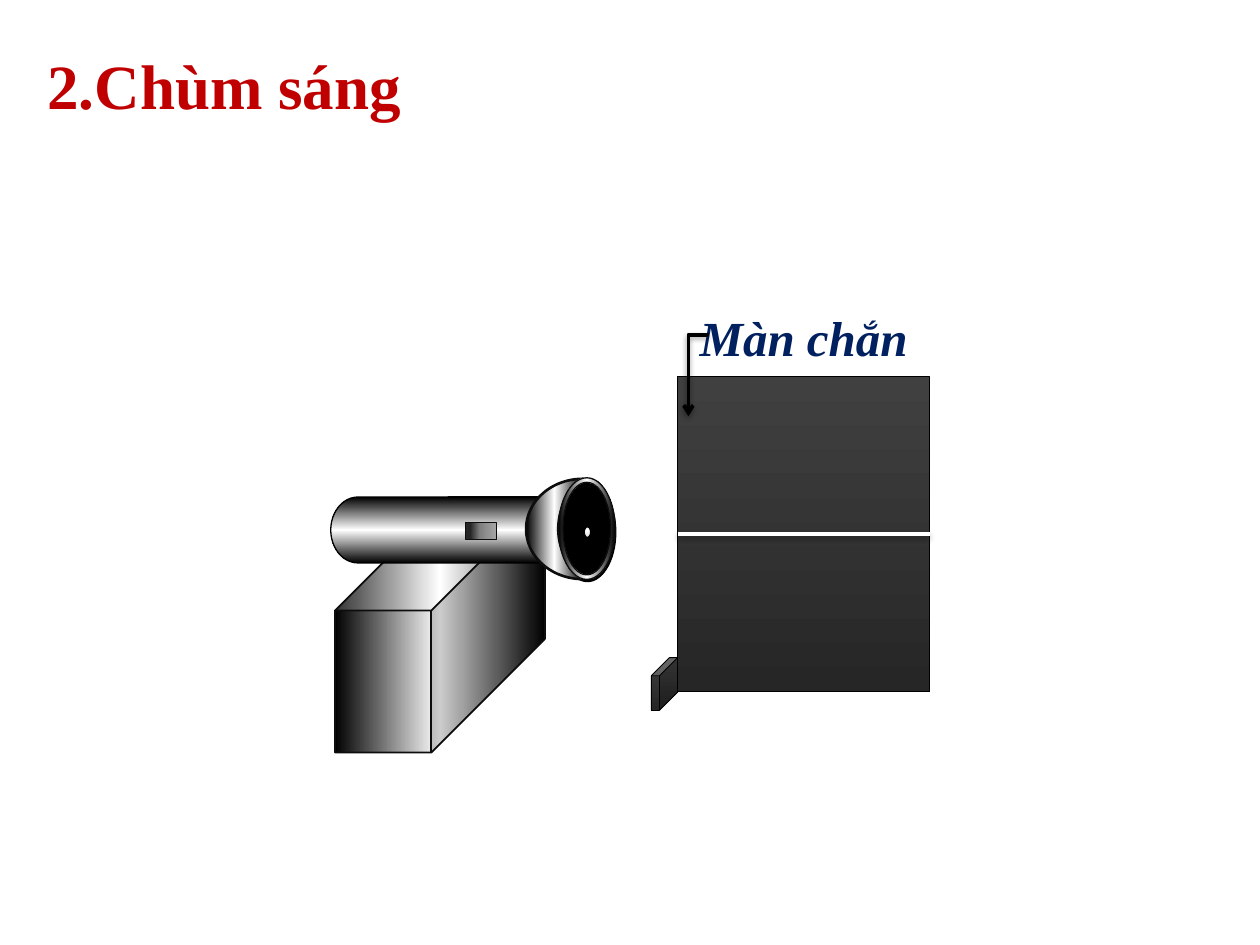
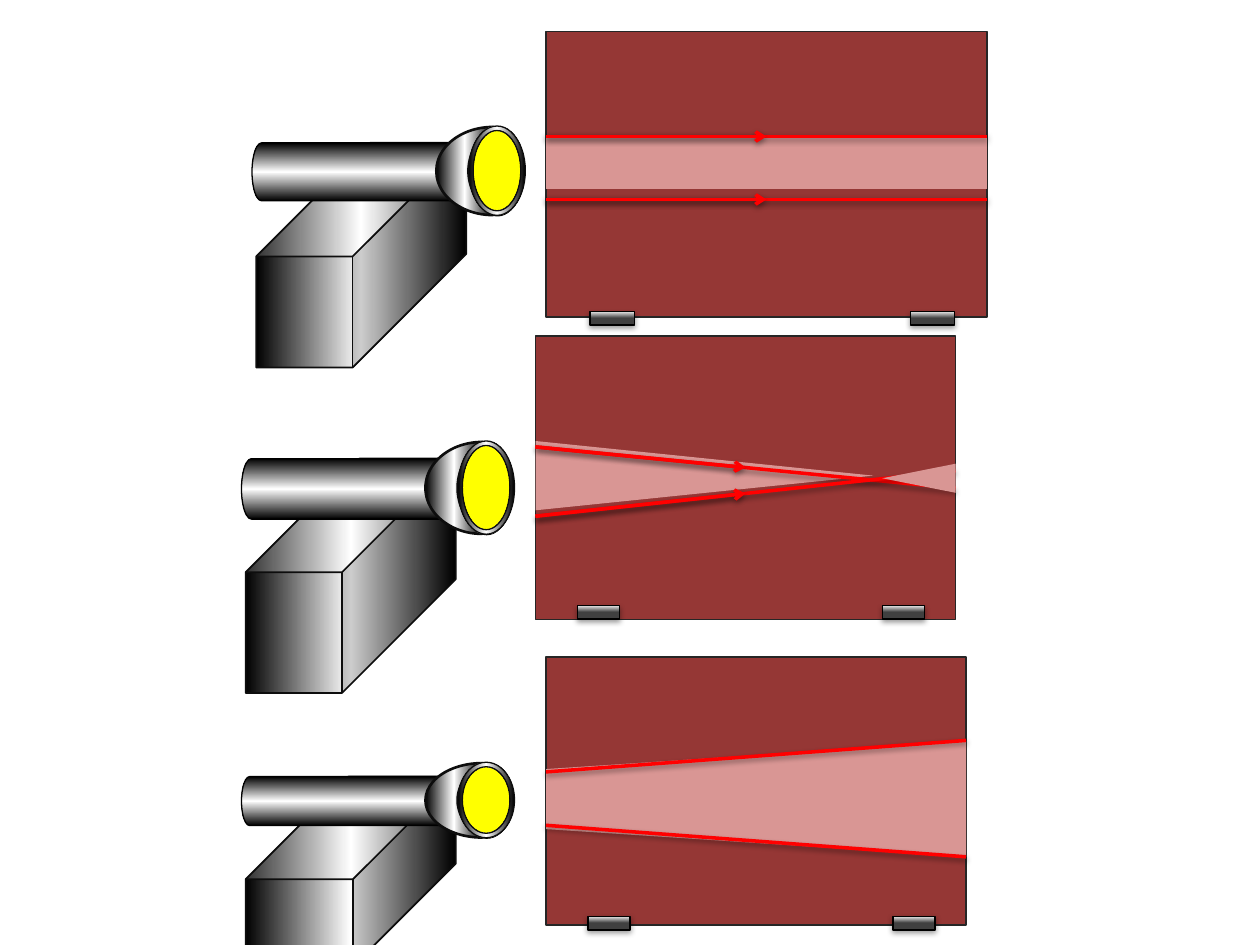
"""Build two slides that show a torch and the kinds of light beam."""
from math import cos, pi, sin

from lxml.etree import SubElement
from pptx import Presentation
from pptx.dml.color import RGBColor
from pptx.enum.shapes import MSO_CONNECTOR, MSO_SHAPE
from pptx.enum.text import MSO_AUTO_SIZE, PP_ALIGN
from pptx.oxml.ns import qn
from pptx.util import Pt

COLORS = {
    "black": "000000", "white": "FFFFFF", "edge": "0D0D0D", "board_edge": "262626",
    "charcoal": "404040", "grey": "808080", "silver": "A6A6A6", "pale": "EEEEEE",
    "board": "953735", "light": "D99694", "ray": "FF0000", "bulb": "FFFF00",
    "title": "C00000", "label": "002060",
}
METAL = ([(0, "black"), (50, "white"), (100, "black")], 0)
SCREEN = ([(0, "board_edge"), (100, "charcoal")], 270)
FOOT = ([(0, "charcoal"), (51, "charcoal"), (100, "pale")], 270)
SWITCH = ([(17, "board_edge"), (48, "grey"), (100, "silver")], 0)
TITLE = {"size": Pt(36), "name": "Times New Roman", "bold": True}
LABEL = {"size": Pt(28), "name": "Times New Roman", "bold": True, "italic": True}


def rgb(name):
    """Return the named colour."""
    return RGBColor.from_string(COLORS[name])


def add_shadow(effects):
    """Add the soft shadow below a part to its effect list."""
    outer = SubElement(effects, qn("a:outerShdw"), blurRad=str(Pt(3.15)),
                       dist=str(Pt(1.57)), dir="5400000", rotWithShape="0")
    color = SubElement(outer, qn("a:srgbClr"), val=COLORS["black"])
    SubElement(color, qn("a:alpha"), val="38000")


def paint(shape, fill, edge=None, width=0.75):
    """Give a shape a plain or gradient fill and an outline."""
    shape.shadow.inherit = False
    if isinstance(fill, str):
        shape.fill.solid()
        shape.fill.fore_color.rgb = rgb(fill)
    else:
        stops, angle = fill
        shape.fill.gradient()
        gradient = shape._element.spPr.find(qn("a:gradFill"))
        stop_list = gradient.find(qn("a:gsLst"))
        for stop in list(stop_list):
            stop_list.remove(stop)
        for position, name in stops:
            stop = SubElement(stop_list, qn("a:gs"), pos=str(position * 1000))
            SubElement(stop, qn("a:srgbClr"), val=COLORS[name])
        gradient.find(qn("a:lin")).set("ang", str(angle * 60000))
    if edge:
        shape.line.color.rgb = rgb(edge)
        shape.line.width = Pt(width)
    else:
        shape.line.fill.background()


def add_part(slide, kind, box, fill, edge=None, width=0.75, adjust=None, turn=0):
    """Add a preset shape that fills the box as seen after its turn."""
    x, y, w, h = box
    if turn in (90, 270):
        x, y, w, h = x + (w - h) / 2, y + (h - w) / 2, h, w
    shape = slide.shapes.add_shape(kind, Pt(x), Pt(y), Pt(w), Pt(h))
    shape.rotation = turn
    if adjust is not None:
        shape.adjustments[0] = adjust
    paint(shape, fill, edge, width)
    return shape


def style_line(connector, color, arrow=False):
    """Colour a connector and add its shadow and arrowhead."""
    connector.line.color.rgb = rgb(color)
    connector.line.width = Pt(2)
    properties = connector._element.spPr
    if arrow:
        SubElement(properties.find(qn("a:ln")), qn("a:tailEnd"), type="arrow")
    add_shadow(SubElement(properties, qn("a:effectLst")))


def add_line(slide, start, end, color, arrow=False):
    """Add a straight line between two points."""
    line = slide.shapes.add_connector(
        MSO_CONNECTOR.STRAIGHT, *(Pt(value) for value in (*start, *end)))
    style_line(line, color, arrow)


def add_ray(slide, board, start_y, end_y, arrow=True):
    """Add a ray across the board, with an arrowhead half way if wanted."""
    x, y, w, _ = board
    start = (x, y + start_y)
    add_line(slide, start, (x + w, y + end_y), "ray")
    if arrow:
        add_line(slide, start, (x + w / 2, y + (start_y + end_y) / 2), "ray", True)


def add_text(slide, box, words, color, formats, align=PP_ALIGN.LEFT):
    """Add one line of formatted text."""
    frame = slide.shapes.add_textbox(*(Pt(value) for value in box)).text_frame
    frame.word_wrap = True
    frame.auto_size = MSO_AUTO_SIZE.SHAPE_TO_FIT_TEXT
    paragraph = frame.paragraphs[0]
    paragraph.alignment = align
    run = paragraph.add_run()
    run.text = words
    run.font.color.rgb = rgb(color)
    for attribute, value in formats.items():
        setattr(run.font, attribute, value)


def oval_points(box, count=60):
    """Return points around the oval in a box."""
    x, y, w, h = box
    angles = [2 * pi * step / count for step in range(count)]
    return [(Pt(x + w / 2 * (1 + cos(a))), Pt(y + h / 2 * (1 + sin(a)))) for a in angles]


def add_pinhole_cap(slide, box):
    """Add a black cap with a small hole in its middle."""
    x, y, w, h = box
    rim = oval_points(box)
    hole = oval_points((x + w / 2 - 1.8, y + h / 2 - 3, 3.6, 6))
    builder = slide.shapes.build_freeform(*rim[0])
    builder.add_line_segments(rim[1:])
    builder.move_to(*hole[0])
    builder.add_line_segments(hole[:0:-1])
    paint(builder.convert_to_shape(), "black", "black")


def add_torch(slide, box, body_length=126, body_curve=0.328, capped=False):
    """Add a torch on its block, with an open lens or a pinhole cap."""
    x, y, w, h = box
    right = x + w
    add_part(slide, MSO_SHAPE.CUBE, (x + 2.4, y + 0.07 * h, 120, 0.93 * h),
             METAL, "edge", 1, 0.541)
    add_part(slide, MSO_SHAPE.CAN, (x, y + 0.07 * h, body_length, 0.24 * h),
             METAL, "black", adjust=body_curve, turn=90)
    if capped:
        add_pinhole_cap(slide, (right - 32, y + 0.018 * h, 32.4, 0.36 * h))
    else:
        add_part(slide, MSO_SHAPE.OVAL, (right - 31, y + 0.005 * h, 30.2, 0.367 * h),
                 "bulb", "black")
    add_part(slide, MSO_SHAPE.MOON, (right - 50.9, y + 0.004 * h, 32.4, 0.365 * h),
             METAL, "edge", 1.5, 0.567)
    add_part(slide, MSO_SHAPE.DONUT, (right - 32.4, y, 32.4, 0.37 * h),
             METAL, "edge", adjust=0.08)


def add_board(slide, board, foot_top):
    """Add a board standing on two feet."""
    x, y, w, _ = board
    add_part(slide, MSO_SHAPE.FLOWCHART_PROCESS, board, "board", "board_edge", 1)
    for share in (0.1, 0.826):
        foot = add_part(slide, MSO_SHAPE.RECTANGLE,
                        (x + share * w, y + foot_top, 0.1 * w, 7.8), FOOT, "black")
        add_shadow(foot._element.spPr.find(qn("a:effectLst")))


def add_parallel_beam(slide, board):
    """Show a parallel beam on a board."""
    x, y, w, _ = board
    add_board(slide, board, 160)
    add_ray(slide, board, 96, 96)
    add_part(slide, MSO_SHAPE.FLOWCHART_PROCESS, (x, y + 61, w, 29), "light")
    add_ray(slide, board, 60, 60)


def add_converging_beam(slide, board):
    """Show a beam that narrows to a point and opens again."""
    x, y, w, _ = board
    add_board(slide, board, 154)
    add_part(slide, MSO_SHAPE.FLOWCHART_EXTRACT, (x, y + 60, 193, 39.6), "light", turn=90)
    add_ray(slide, board, 63.4, 87)
    add_ray(slide, board, 103, 77)
    add_part(slide, MSO_SHAPE.ISOSCELES_TRIANGLE, (x + w - 41.8, y + 73, 41.8, 16.6),
             "light", turn=270)


def add_diverging_beam(slide, board):
    """Show a beam that widens across a board."""
    x, y, w, _ = board
    add_board(slide, board, 148)
    add_part(slide, MSO_SHAPE.TRAPEZOID, (x, y + 48, w, 66), "light",
             adjust=0.24, turn=270)
    add_ray(slide, board, 65.5, 47.5, arrow=False)
    add_ray(slide, board, 96, 114, arrow=False)


def add_screen(slide, box):
    """Add the slotted screen with its stand, label and pointer."""
    x, y, w, h = box
    add_part(slide, MSO_SHAPE.CUBE, (x - 15, y + 160.6, 15, 30.2),
             SCREEN, "black", 0.5, 0.692)
    add_part(slide, MSO_SHAPE.RECTANGLE, box, SCREEN, "black", 0.5)
    add_line(slide, (x, y + h / 2), (x + w, y + h / 2), "white")
    add_text(slide, (x, y - 43.2, w, 41), "Màn chắn", "label", LABEL, PP_ALIGN.CENTER)
    left, top = x - 12.2, y - 6.5
    pointer = slide.shapes.add_connector(
        MSO_CONNECTOR.ELBOW, Pt(left), Pt(top), Pt(left + 47.5), Pt(top + 10.8))
    properties = pointer._element.spPr
    properties.find(qn("a:xfrm")).set("rot", "5400000")
    guides = properties.find(qn("a:prstGeom")).find(qn("a:avLst"))
    SubElement(guides, qn("a:gd"), name="adj1", fmla="val 2100")
    style_line(pointer, "black", arrow=True)


def build_screen_slide(slide):
    """Build the slide with the capped torch and the screen."""
    add_torch(slide, (189, 273, 162.5, 157), 153.4, 0.824, capped=True)
    add_screen(slide, (387.2, 215.2, 144, 180))
    add_part(slide, MSO_SHAPE.RECTANGLE, (265.7, 298.2, 18, 10), SWITCH, "edge", 0.25)
    add_text(slide, (20, 23, 291.6, 51), "2.Chùm sáng", "title", TITLE)


def build_beams_slide(slide):
    """Build the slide with one torch and board for each kind of beam."""
    rows = [
        ((144, 72, 156.2, 138), (312, 18, 252, 163), add_parallel_beam),
        ((138, 252, 156, 144), (306, 192, 240, 162), add_converging_beam),
        ((138, 435.6, 156, 116.6), (312, 375.6, 240, 153), add_diverging_beam),
    ]
    for torch, board, add_beam in rows:
        add_torch(slide, torch)
        add_beam(slide, board)


def main():
    """Build and save the presentation."""
    deck = Presentation()
    deck.slide_width, deck.slide_height = Pt(720), Pt(540)
    for build in (build_screen_slide, build_beams_slide):
        build(deck.slides.add_slide(deck.slide_layouts[6]))
    deck.save("out.pptx")


if __name__ == "__main__":
    main()
